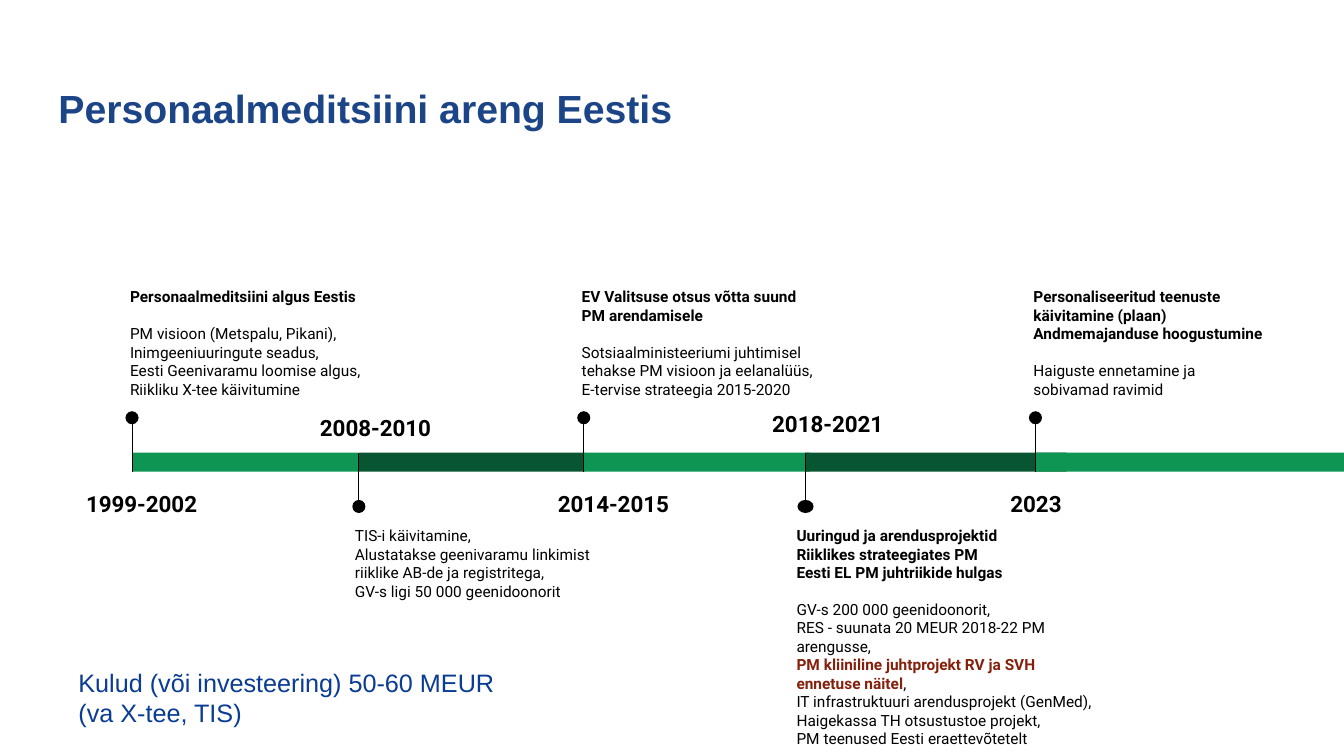
from dataclasses import dataclass

from lxml.etree import SubElement
from pptx import Presentation
from pptx.dml.color import RGBColor
from pptx.enum.shapes import MSO_CONNECTOR as CONNECTOR, MSO_SHAPE as SHAPE
from pptx.enum.text import MSO_ANCHOR as ANCHOR, PP_ALIGN as ALIGN
from pptx.oxml.ns import qn
from pptx.util import Inches, Pt

COLORS = {
    "title": "1C4587",
    "cost": "093C92",
    "light": "0E9453",
    "dark": "085631",
    "black": "000000",
    "accent": "85200C",
}
BAR_TOP, BAR_HEIGHT = 4.49, 0.19
DOT = 0.13


@dataclass
class Period:
    """One stretch of the timeline; above tells on which side its text stands."""
    years: str
    year_box: tuple  # left, top, width
    x: float
    length: float
    text_left: float
    heads: list
    lines: list
    above: bool
    text_width: float = 2.6
    dot_width: float = DOT


PERIODS = [
    Period("1999-2002", (0.68, 4.69, 1.45), 1.31, 2.24, 1.16,
           ["Personaalmeditsiini algus Eestis"],
           ["PM visioon (Metspalu, Pikani),",
            "Inimgeeniuuringute seadus,",
            "Eesti Geenivaramu loomise algus,",
            "Riikliku X-tee käivitumine"], True),
    Period("2008-2010", (3.02, 3.94, 1.41), 3.56, 2.24, 3.39,
           [],
           ["TIS-i käivitamine,",
            "Alustatakse geenivaramu linkimist riiklike AB-de ja registritega,",
            "GV-s ligi 50 000 geenidoonorit"], False),
    Period("2014-2015", (5.31, 4.69, 1.55), 5.79, 2.24, 5.64,
           ["EV Valitsuse otsus võtta suund PM arendamisele"],
           ["Sotsiaalministeeriumi juhtimisel tehakse PM visioon ja eelanalüüs,",
            "E-tervise strateegia 2015-2020"], True),
    Period("2018-2021", (7.37, 3.9, 1.68), 7.99, 2.59, 7.77,
           ["Uuringud ja arendusprojektid",
            "Riiklikes strateegiates PM",
            "Eesti EL PM juhtriikide hulgas"],
           ["GV-s 200 000 geenidoonorit,",
            "RES - suunata 20 MEUR 2018-22 PM arengusse,",
            ("PM kliiniline juhtprojekt RV ja SVH ennetuse näitel", ","),
            "IT infrastruktuuri arendusprojekt (GenMed),",
            "Haigekassa TH otsustustoe projekt,",
            "PM teenused Eesti eraettevõtetelt"], False, 3.25, 0.16),
    Period("2023", (9.73, 4.69, 1.09), 10.27, 3.06, 10.12,
           ["Personaliseeritud teenuste käivitamine (plaan)",
            "Andmemajanduse hoogustumine"],
           ["Haiguste ennetamine ja sobivamad ravimid"], True),
]


def rgb(name):
    return RGBColor.from_string(COLORS[name])


def add_text_frame(shapes, left, top, width, height, inset=0.13, anchor=ANCHOR.TOP):
    tf = shapes.add_textbox(*map(Inches, (left, top, width, height))).text_frame
    tf.word_wrap = True
    tf.vertical_anchor = anchor
    tf.margin_left = tf.margin_right = Inches(inset)
    tf.margin_top = tf.margin_bottom = Inches(min(inset, inset if inset > 0.1 else 0.05))
    return tf


def add_line(tf, text, size, color, font="Roboto", bold=False):
    """Add a paragraph; a tuple gives an accented part and a plain part."""
    first = tf.paragraphs[0]
    p = tf.add_paragraph() if first.runs else first
    p.font.size = Pt(size)
    p.font.name = font
    p.font.bold = bold
    p.font.color.rgb = rgb(color)
    parts = (text,) if isinstance(text, str) else text
    for part in parts:
        p.add_run().text = part
    if len(parts) > 1:
        p.runs[0].font.bold = True
        p.runs[0].font.color.rgb = rgb("accent")
    return p


def add_filled(shapes, kind, left, top, width, height, color):
    sp = shapes.add_shape(kind, *map(Inches, (left, top, width, height)))
    sp.shadow.inherit = False
    sp.fill.solid()
    sp.fill.fore_color.rgb = rgb(color)
    sp.line.fill.background()


def add_stem(shapes, x, top, bottom):
    stem = shapes.add_connector(CONNECTOR.STRAIGHT, *map(Inches, (x, top, x, bottom)))
    stem.line.color.rgb = rgb("black")
    stem.line.width = Pt(0.75)
    SubElement(stem._element.spPr, qn("a:effectLst"))


def add_period(slide, period, color):
    shapes = slide.shapes.add_group_shape().shapes
    add_filled(shapes, SHAPE.RECTANGLE, period.x, BAR_TOP, period.length, BAR_HEIGHT, color)

    if period.above:
        stem, dot_top, text_top, anchor = (4.16, 4.68), 4.08, 2.7, ANCHOR.BOTTOM
    else:
        stem, dot_top, text_top, anchor = (BAR_TOP, 5.02), 4.96, 5.09, ANCHOR.TOP
    add_stem(shapes, period.x, *stem)
    add_filled(shapes, SHAPE.OVAL, period.x - period.dot_width / 2, dot_top,
               period.dot_width, DOT, "black")

    tf = add_text_frame(shapes, *period.year_box, 0.54)
    p = add_line(tf, period.years, 16, "black", bold=True)
    p.alignment = ALIGN.CENTER
    p.line_spacing = 1.15

    tf = add_text_frame(shapes, period.text_left, text_top, period.text_width, 1.38,
                        anchor=anchor)
    for head in period.heads:
        add_line(tf, head, 11, "black", bold=True)
    for i, line in enumerate(period.lines):
        p = add_line(tf, line, 11, "black")
        if i == 0 and period.heads:
            p.space_before = Pt(13)


def main():
    prs = Presentation()
    prs.slide_width, prs.slide_height = Inches(13.33), Inches(7.5)
    slide = prs.slides.add_slide(prs.slide_layouts[6])

    tf = add_text_frame(slide.shapes, 0.45, 0.65, 12.42, 0.84, anchor=ANCHOR.MIDDLE)
    add_line(tf, "Personaalmeditsiini areng Eestis", 28, "title", "Arial", True)

    for i, period in enumerate(PERIODS):
        add_period(slide, period, ("light", "dark")[i % 2])

    tf = add_text_frame(slide.shapes, 0.68, 6.57, 4.44, 0.71, inset=0.1)
    for line in ("Kulud (või investeering) 50-60 MEUR", "(va X-tee, TIS)"):
        add_line(tf, line, 18, "cost", "Arial")

    prs.save("out.pptx")


if __name__ == "__main__":
    main()
